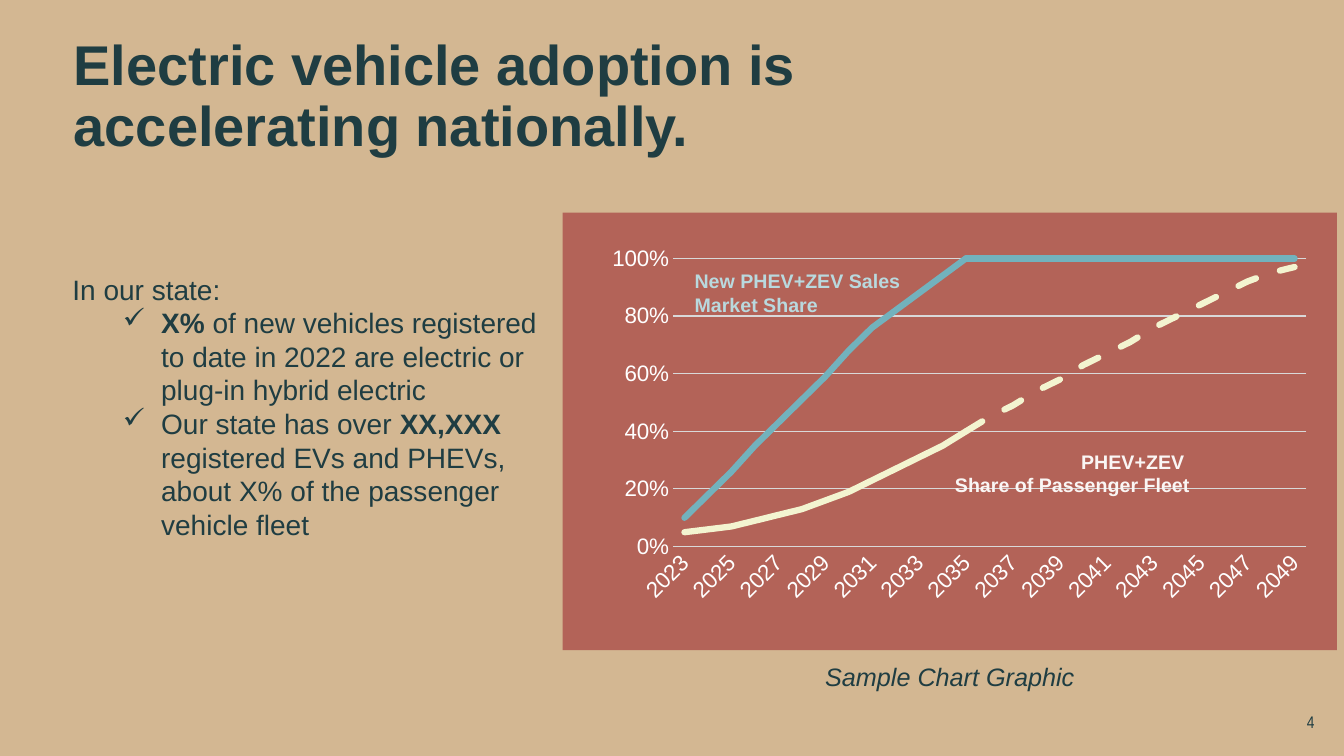
"""Build the slide on national electric vehicle adoption."""
from dataclasses import dataclass

from lxml import etree
from pptx import Presentation
from pptx import util as u
from pptx.chart.chart import Chart
from pptx.chart.data import CategoryChartData
from pptx.dml.color import RGBColor
from pptx.enum import chart as kinds, dml, shapes, text
from pptx.oxml.ns import qn
from pptx.slide import Slide

SAND = RGBColor(0xD3, 0xB7, 0x92)
BRICK = RGBColor(0xB3, 0x63, 0x58)
PINE = RGBColor(0x1F, 0x3D, 0x42)
TEAL = RGBColor(0x72, 0xB2, 0xBD)
MIST = RGBColor(0xB9, 0xD9, 0xDE)
CREAM = RGBColor(0xF3, 0xF4, 0xD0)
PEARL = RGBColor(0xFA, 0xF6, 0xF4)
GRAY = RGBColor(0xD9, 0xD9, 0xD9)
WHITE = RGBColor(0xFF, 0xFF, 0xFF)

ALIGN = text.PP_ALIGN
YEARS = range(2023, 2050)
TURN = 2035 - YEARS.start


@dataclass(frozen=True)
class Run:
    """One stretch of text."""
    text: str
    bold: bool = False


@dataclass(frozen=True)
class Para:
    """One paragraph, with a check mark or without."""
    runs: tuple[Run, ...]
    check: bool = False


@dataclass(frozen=True)
class Box:
    """A text box and its look."""
    place: tuple[float, float, float, float]
    paras: tuple[Para, ...]
    size: int
    color: RGBColor = PINE
    align: ALIGN = ALIGN.LEFT
    font: str = "Arial"
    bold: bool = False
    slant: bool = False
    wrap: bool = True
    mid: bool = False


@dataclass(frozen=True)
class Curve:
    """One line of the chart."""
    name: str
    start: int
    values: tuple[float, ...]
    color: RGBColor
    dash: bool = False


BOXES = (
    Box((12.44, 6.96, 1.12, 0.4), (Para((Run("4"),)),), 12,
        align=ALIGN.CENTER, font="Arial Narrow", mid=True),
    Box((0.62, 2.65, 4.96, 3.13), (
        Para((Run("In our state:"),)),
        Para((Run("X%", True),
              Run(" of new vehicles registered to date in 2022 are "
                  "electric or plug-in hybrid electric")), True),
        Para((Run("Our state has over "), Run("XX,XXX", True),
              Run(" registered EVs and PHEVs, about X% of the "
                  "passenger vehicle fleet")), True)), 20),
    Box((6.79, 2.62, 2.26, 0.57),
        (Para((Run("New PHEV+ZEV Sales\nMarket Share"),)),), 14,
        color=MIST, bold=True, wrap=False),
    Box((9.36, 4.41, 2.54, 0.57),
        (Para((Run("PHEV+ZEV \nShare of Passenger Fleet"),)),), 14,
        color=PEARL, align=ALIGN.RIGHT, bold=True, wrap=False),
    Box((5.58, 6.51, 7.68, 0.4), (Para((Run("Sample Chart Graphic"),)),), 18,
        align=ALIGN.CENTER, slant=True),
)

CURVES = (
    Curve("Series 1", 0, (0.1, 0.18, 0.26, 0.35, 0.43, 0.51, 0.59, 0.68,
                          0.76, 0.82, 0.88, 0.94, 1), TEAL),
    Curve("Series 2", 0, (0.05, 0.06, 0.07, 0.09, 0.11, 0.13, 0.16, 0.19,
                          0.23, 0.27, 0.31, 0.35, 0.4), CREAM),
    Curve("Series 3", TURN, (1,) * (len(YEARS) - TURN), TEAL),
    Curve("Series 4", TURN, (0.4, 0.45, 0.49, 0.54, 0.58, 0.63, 0.67, 0.71,
                             0.76, 0.8, 0.84, 0.88, 0.92, 0.95, 0.97),
          CREAM, True),
)


def inches(place: tuple[float, ...]) -> list[u.Length]:
    """Turn a place into lengths."""
    return [u.Inches(side) for side in place]


def style(font, size: int, color: RGBColor, name: str = "Arial") -> None:
    """Set the face, size and color of a font."""
    font.name, font.size = name, u.Pt(size)
    font.color.rgb = color


def add_check(line) -> None:
    """Give a paragraph a hanging check mark."""
    props = line._p.get_or_add_pPr()
    props.set("marL", str(u.Inches(0.88)))
    props.set("indent", str(u.Inches(-0.38)))
    etree.SubElement(props, qn("a:buChar")).set("char", "✓")


def add_box(slide: Slide, box: Box) -> None:
    """Draw a text box."""
    frame = slide.shapes.add_textbox(*inches(box.place)).text_frame
    frame.word_wrap = box.wrap
    if box.mid:
        frame.vertical_anchor = text.MSO_ANCHOR.MIDDLE
    for spot, para in enumerate(box.paras):
        line = frame.add_paragraph() if spot else frame.paragraphs[0]
        if para.check:
            add_check(line)
        line.alignment = box.align
        style(line.font, box.size, box.color, box.font)
        line.font.bold, line.font.italic = box.bold, box.slant
        for run in para.runs:
            for row, words in enumerate(run.text.split("\n")):
                if row:
                    line.add_line_break()
                part = line.add_run()
                part.text = words
                if run.bold:
                    part.font.bold = True


def add_title(slide: Slide) -> None:
    """Place and format the title."""
    title = slide.shapes.title
    title.left, title.top, title.width, title.height = inches(
        (0.63, 0.69, 10.46, 0.93))
    frame = title.text_frame
    frame.text = "Electric vehicle adoption is accelerating nationally."
    frame.auto_size = text.MSO_AUTO_SIZE.NONE
    frame.vertical_anchor = text.MSO_ANCHOR.BOTTOM
    line = frame.paragraphs[0]
    line.alignment, line.line_spacing = ALIGN.LEFT, 0.9
    style(line.font, 40, PINE)
    line.font.bold = True


def add_panel(slide: Slide) -> None:
    """Draw the panel behind the chart."""
    panel = slide.shapes.add_shape(
        shapes.MSO_SHAPE.RECTANGLE, *inches((5.58, 2.11, 7.68, 4.34)))
    panel.shadow.inherit = False
    panel.fill.solid()
    panel.fill.fore_color.rgb = BRICK
    panel.line.fill.background()


def style_axes(chart: Chart) -> None:
    """Format both axes and the grid."""
    years, share = chart.category_axis, chart.value_axis
    for axis in (years, share):
        axis.major_tick_mark = axis.minor_tick_mark = kinds.XL_TICK_MARK.NONE
        style(axis.tick_labels.font, 16, WHITE)
    share.minimum_scale, share.maximum_scale = 0, 1.01
    share.major_unit = 0.2
    share.tick_labels.number_format = "0%"
    share.tick_labels.number_format_is_linked = False
    share.format.line.fill.background()
    for line in (years.format.line, share.major_gridlines.format.line):
        line.color.rgb, line.width = GRAY, u.Pt(0.75)
    for body in chart.element.xpath(".//c:catAx/c:txPr/a:bodyPr"):
        body.set("rot", "-2700000")


def add_graph(slide: Slide) -> None:
    """Draw the chart of market and fleet share."""
    data = CategoryChartData(number_format="0%")
    data.categories = [str(year) for year in YEARS]
    for curve in CURVES:
        rest = len(YEARS) - curve.start - len(curve.values)
        data.add_series(curve.name, [None] * curve.start
                        + list(curve.values) + [None] * rest)
    chart = slide.shapes.add_chart(
        kinds.XL_CHART_TYPE.LINE, *inches((5.93, 2.37, 7.17, 3.68)), data).chart
    chart.has_title = chart.has_legend = False
    style(chart.font, 16, RGBColor(0, 0, 0))
    plot = chart.plots[0]
    plot.vary_by_categories = False
    for curve, series in zip(CURVES, plot.series):
        series.smooth = False
        series.marker.style = kinds.XL_MARKER_STYLE.NONE
        line = series.format.line
        line.color.rgb, line.width = curve.color, u.Pt(4.5)
        if curve.dash:
            line.dash_style = dml.MSO_LINE.DASH
    for stroke in chart.element.xpath(".//c:ser/c:spPr/a:ln"):
        stroke.set("cap", "rnd")
    style_axes(chart)


def main() -> None:
    """Build and save the deck."""
    deck = Presentation()
    deck.slide_width, deck.slide_height = inches((13.33, 7.5))
    slide = deck.slides.add_slide(deck.slide_layouts[5])
    slide.background.fill.solid()
    slide.background.fill.fore_color.rgb = SAND
    add_panel(slide)
    add_title(slide)
    add_graph(slide)
    for box in BOXES:
        add_box(slide, box)
    deck.save("out.pptx")


if __name__ == "__main__":
    main()
